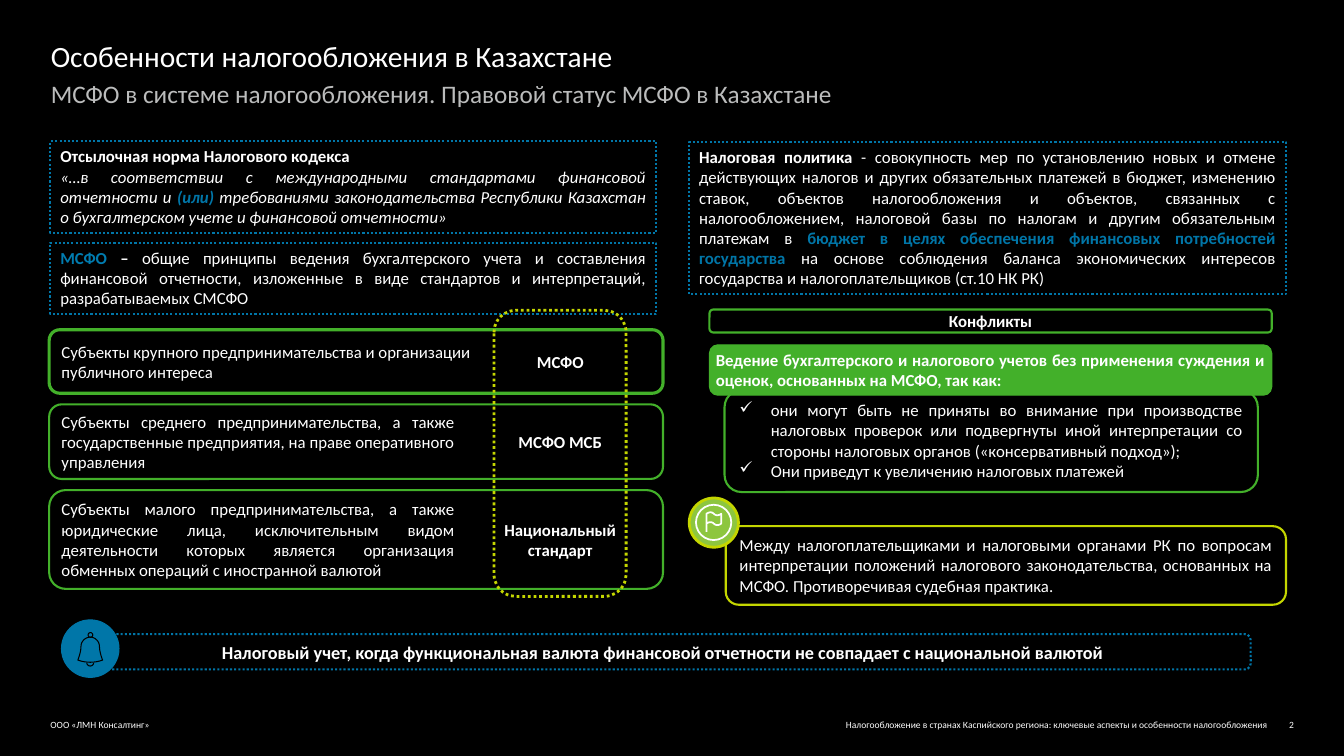
import pptx
import pptx.util
import pptx.dml.color
import pptx.enum.dml
import pptx.enum.shapes
import pptx.enum.text
from lxml import etree

Cm = pptx.util.Cm
Pt = pptx.util.Pt
KIND = pptx.enum.shapes.MSO_SHAPE
ALIGN = pptx.enum.text.PP_ALIGN
ANCHOR = pptx.enum.text.MSO_ANCHOR
COLOURS = {
    "black": "000000", "white": "FFFFFF", "grey": "BBBCBC", "blue": "0076A8",
    "sky": "007CB0", "green": "43B02A", "lime": "C4D600", "leaf": "8DC63F",
}


def tint(name):
    return pptx.dml.color.RGBColor.from_string(COLOURS[name])


def place(box):
    return [Cm(round(side, 2)) for side in box]


def paint(shape, fill=None, line=None, width=1.5, dots=False):
    shape.shadow.inherit = False
    if fill:
        shape.fill.solid()
        shape.fill.fore_color.rgb = tint(fill)
    else:
        shape.fill.background()
    if line:
        shape.line.color.rgb = tint(line)
        shape.line.width = Pt(width)
        if dots:
            shape.line.dash_style = pptx.enum.dml.MSO_LINE.ROUND_DOT
    else:
        shape.line.fill.background()


def draw(shapes, kind, box, **look):
    shape = shapes.add_shape(kind, *place(box))
    paint(shape, **look)
    return shape


def bullet(para, mark):
    props = para._p.get_or_add_pPr()
    props.set("marL", str(Cm(0.79)))
    props.set("indent", str(-Cm(0.79)))
    tag = "{http://schemas.openxmlformats.org/drawingml/2006/main}buChar"
    etree.SubElement(props, tag).set("char", mark)


def write(shape, paras, size=12, align=ALIGN.JUSTIFY, anchor=ANCHOR.TOP,
          inset=None, mark=None):
    frame = shape.text_frame
    frame.word_wrap = True
    frame.auto_size = pptx.enum.text.MSO_AUTO_SIZE.NONE
    frame.vertical_anchor = anchor
    if inset is not None:
        frame.margin_left = frame.margin_right = Cm(inset)
        frame.margin_top = frame.margin_bottom = Cm(inset)
    for index, parts in enumerate(paras):
        para = frame.add_paragraph() if index else frame.paragraphs[0]
        para.alignment = align
        if mark:
            bullet(para, mark)
        for text, style, colour in parts:
            run = para.add_run()
            run.text = text
            run.font.name = "Calibri"
            run.font.size = Pt(size)
            run.font.bold = "b" in style
            run.font.italic = "i" in style
            run.font.color.rgb = tint(colour)


def label(slide, box, text, style="", colour="white", **look):
    shape = slide.shapes.add_textbox(*place(box))
    write(shape, [[(text, style, colour)]], inset=0, **look)


def bend(points):
    path = [points[0]]
    for start in range(0, len(points) - 1, 3):
        a, b, c, d = points[start:start + 4]
        for step in range(1, 9):
            t = step / 8
            u = 1 - t
            path.append(tuple(
                u**3 * p + 3 * u * u * t * q + 3 * u * t * t * r + t**3 * s
                for p, q, r, s in zip(a, b, c, d)))
    return path


def trace(shapes, box, path, close, colour, width):
    x, y, side = box[:3]
    spots = [(Cm(x + side * px / 100), Cm(y + side * py / 100))
             for px, py in path]
    maker = shapes.build_freeform(*spots[0])
    maker.add_line_segments(spots[1:], close=close)
    paint(maker.convert_to_shape(), line=colour, width=width)


def bell(slide, box):
    x, y, side = box[:3]
    shapes = slide.shapes.add_group_shape().shapes
    draw(shapes, KIND.OVAL, box, fill="blue", line="blue", width=0.75)
    body = [(50, 30), (42, 30), (34, 37), (34, 46), (34, 56), (29, 69),
            (28.5, 70), (42, 75), (58, 75), (71.5, 70), (71, 69), (66, 56),
            (66, 46), (66, 37), (58, 30), (50, 30)]
    trace(shapes, box, bend(body), True, "black", 0.75)
    tongue = [(44, 75), (45, 82), (55, 82), (56, 75)]
    trace(shapes, box, bend(tongue), False, "black", 0.75)
    knob = (x + side * 0.46, y + side * 0.22, side * 0.08, side * 0.08)
    draw(shapes, KIND.OVAL, knob, line="black", width=0.75)


def flag(slide, box):
    x, y, side = box[:3]
    shapes = slide.shapes.add_group_shape().shapes
    draw(shapes, KIND.OVAL, box, fill="leaf", line="lime", width=2)
    ring = (x + side * 0.14, y + side * 0.14, side * 0.72, side * 0.72)
    draw(shapes, KIND.OVAL, ring, line="white", width=1.25)
    top = bend([(35, 32), (41, 28), (46, 28), (50, 32), (54, 36), (60, 36),
                (65, 32)])
    base = [(px, py + 20) for px, py in reversed(top)]
    trace(shapes, box, [(35, 69)] + top + base, False, "white", 1.25)


def header(slide, box):
    x, y, w, h = box
    title = slide.shapes.title
    title.left, title.top, title.width, title.height = place((x, y, w, 0.94))
    write(title, [[("Особенности налогообложения в Казахстане", "", "white")]],
          size=21, align=ALIGN.LEFT, inset=0)
    label(slide, (x, y + 1.01, w, h - 1.01),
          "МСФО в системе налогообложения. Правовой статус МСФО в Казахстане",
          colour="grey", size=18, align=ALIGN.LEFT)


def norms(slide, box):
    x, y, w, h = box
    code = draw(slide.shapes, KIND.RECTANGLE, (x, y, w, 2.31), line="blue", dots=True)
    write(code, [
        [("Отсылочная норма Налогового кодекса", "b", "white")],
        [("«…в соответствии с международными стандартами финансовой отчетности и ", "i", "white"),
         ("(или) ", "bi", "blue"),
         ("требованиями законодательства Республики Казахстан о бухгалтерском учете и финансовой отчетности»", "i", "white")]])
    code.text_frame.paragraphs[0].alignment = ALIGN.LEFT
    terms = draw(slide.shapes, KIND.RECTANGLE, (x, y + h - 1.8, w, 1.8), line="blue", dots=True)
    write(terms, [[
        ("МСФО", "b", "sky"), (" – ", "b", "white"),
        ("общие принципы ведения бухгалтерского учета и составления финансовой отчетности, изложенные в виде стандартов и интерпретаций, разрабатываемых СМСФО", "", "white")]])


def levels(slide, box):
    x, y, w, h = box
    rows = [
        (1.6, 2.25, 10.52, ALIGN.LEFT, "МСФО",
         "Субъекты крупного предпринимательства и организации публичного интереса"),
        (1.88, 1.5, 9.91, ALIGN.JUSTIFY, "МСФО МСБ",
         "Субъекты среднего предпринимательства, а также государственные предприятия, на праве оперативного управления"),
        (2.49, 1.5, 9.91, ALIGN.JUSTIFY, "Национальный стандарт",
         "Субъекты малого предпринимательства, а также юридические лица, исключительным видом деятельности которых является организация обменных операций с иностранной валютой"),
    ]
    gap = (h - sum(row[0] for row in rows)) / (len(rows) - 1)
    top = y
    for tall, width, span, align, norm, text in rows:
        draw(slide.shapes, KIND.ROUNDED_RECTANGLE, (x, top, w, tall), line="green", width=width)
        label(slide, (x + 0.31, top, span, tall), text, align=align, anchor=ANCHOR.MIDDLE)
        label(slide, (x + 11.38, top, 3, tall), norm, "b", align=ALIGN.CENTER, anchor=ANCHOR.MIDDLE)
        top += tall + gap
    draw(slide.shapes, KIND.ROUNDED_RECTANGLE, (x + 11.21, y - 0.49, 3.33, h + 0.68),
         line="lime", width=2, dots=True)


def policy(slide, box):
    shape = draw(slide.shapes, KIND.RECTANGLE, box, line="blue", dots=True)
    write(shape, [[
        ("Налоговая политика", "b", "white"),
        (" - совокупность мер по установлению новых и отмене действующих налогов и других обязательных платежей в бюджет, изменению ставок, объектов налогообложения и объектов, связанных с налогообложением, налоговой базы по налогам и другим обязательным платежам в ", "", "white"),
        ("бюджет в целях обеспечения финансовых потребностей государства ", "b", "blue"),
        ("на основе соблюдения баланса экономических интересов государства и налогоплательщиков (ст.10 НК РК)", "", "white")]])


def clash(slide, box):
    x, y, w, h = box
    round_box = KIND.ROUNDED_RECTANGLE
    head = draw(slide.shapes, round_box, (x, y, w, 0.58), line="green")
    write(head, [[("Конфликты", "b", "white")]], align=ALIGN.CENTER, anchor=ANCHOR.MIDDLE, inset=0.1)
    risks = draw(slide.shapes, round_box, (x + 0.38, y + h - 2.57, w - 0.73, 2.57), line="green")
    write(risks, [
        [("они могут быть не приняты во внимание при производстве налоговых проверок или подвергнуты иной интерпретации со стороны налоговых органов («консервативный подход»);", "", "white")],
        [("Они приведут к увеличению налоговых платежей", "", "white")]], mark="✓")
    lead = draw(slide.shapes, round_box, (x, y + 0.89, w, 1.27), fill="green", line="green", width=0.75)
    write(lead, [[("Ведение бухгалтерского и налогового учетов без применения суждения и оценок, основанных на МСФО, так как:", "b", "white")]],
          anchor=ANCHOR.MIDDLE, inset=0.1)


def dispute(slide, box):
    x, y, w, h = box
    note = draw(slide.shapes, KIND.ROUNDED_RECTANGLE, (x + 0.92, y + 0.71, w - 0.92, h - 0.71), line="lime")
    write(note, [[("Между налогоплательщиками и налоговыми органами РК по вопросам интерпретации положений налогового законодательства, основанных на МСФО. Противоречивая судебная практика.", "", "white")]])
    flag(slide, (x, y, 1.24, 1.24))


def banner(slide, box):
    x, y, w, h = box
    bar = draw(slide.shapes, KIND.ROUNDED_RECTANGLE, (x + 0.3, y + 0.36, w - 0.3, 0.89), line="blue", dots=True)
    write(bar, [[("Налоговый учет, когда функциональная валюта финансовой отчетности не совпадает с национальной валютой", "b", "white")]],
          size=13, align=ALIGN.CENTER, anchor=ANCHOR.MIDDLE)
    bell(slide, (x, y, h, h))


def footer(slide, box):
    x, y, w, h = box
    label(slide, (x, y, 15, h), "ООО «ЛМН Консалтинг»", size=6.8, align=ALIGN.LEFT)
    label(slide, (x + w - 14.94, y, 14.28, h),
          "Налогообложение в странах Каспийского региона: ключевые аспекты и особенности налогообложения",
          size=6.8, align=ALIGN.RIGHT)
    label(slide, (x + w - 0.6, y, 0.6, h), "2", size=6.8, align=ALIGN.RIGHT)


def main():
    deck = pptx.Presentation()
    deck.slide_width, deck.slide_height = Cm(33.87), Cm(19.05)
    slide = deck.slides.add_slide(deck.slide_layouts[5])
    slide.background.fill.solid()
    slide.background.fill.fore_color.rgb = tint("black")
    header(slide, (1.28, 0.97, 31.34, 2.08))
    norms(slide, (1.27, 3.56, 15.27, 4.36))
    levels(slide, (1.24, 8.31, 15.47, 6.53))
    policy(slide, (17.37, 3.58, 15.04, 3.84))
    clash(slide, (17.88, 7.8, 14.17, 4.6))
    dispute(slide, (17.37, 12.55, 15.04, 2.69))
    banner(slide, (1.55, 15.62, 29.97, 1.45))
    footer(slide, (1.27, 18.11, 31.34, 0.28))
    deck.save("out.pptx")


if __name__ == "__main__":
    main()
